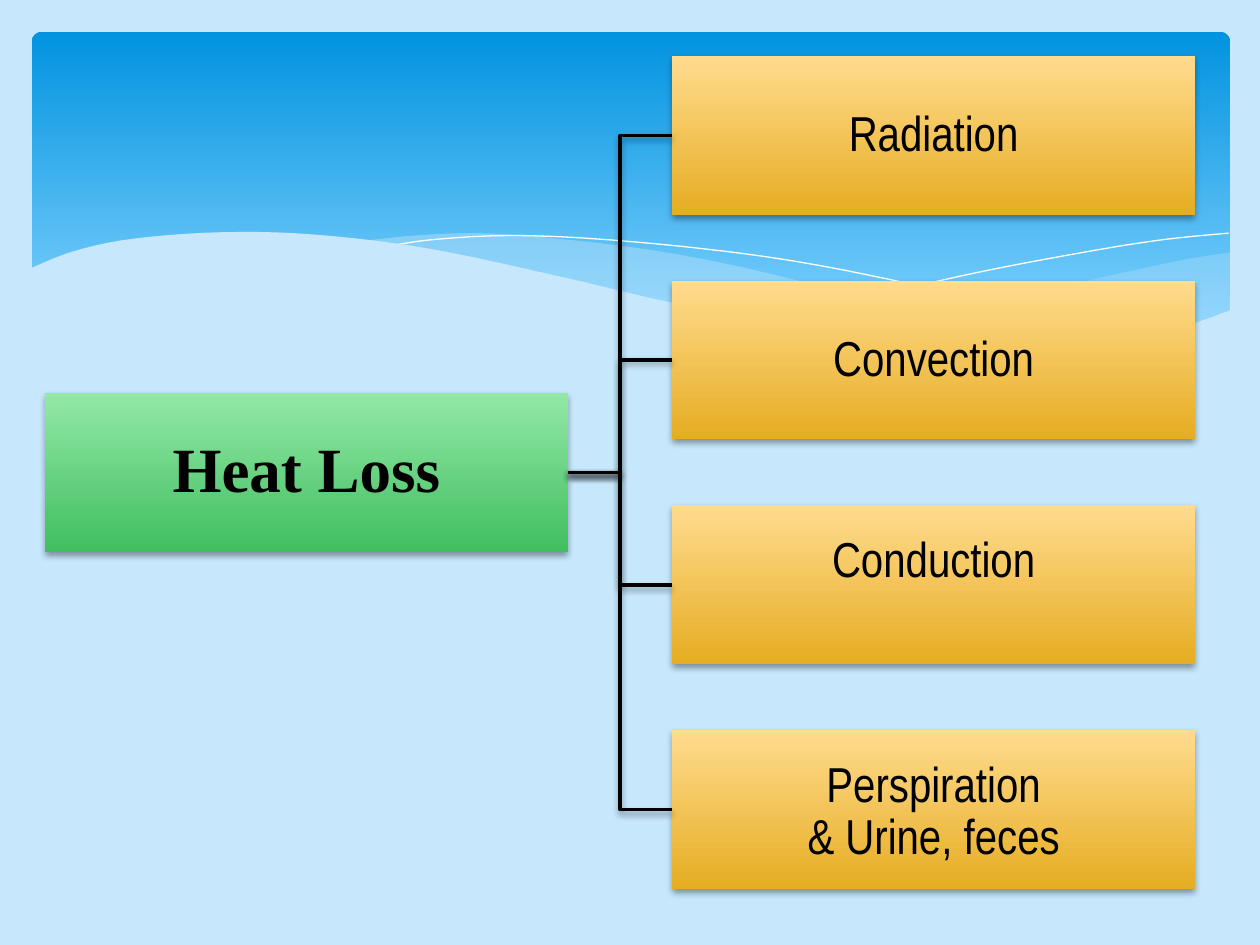
import pptx
import pptx.util
import pptx.dml.color
import pptx.enum.shapes
import pptx.enum.text
import pptx.oxml
import pptx.oxml.ns
import lxml.etree

Cm, Pt = pptx.util.Cm, pptx.util.Pt
KIND = pptx.enum.shapes.MSO_SHAPE
SKY, WHITE, BLACK = "C6E7FC", "FFFFFF", "000000"

# Knots of the waves, in cm from the corner of the banner
SWELL = [
    [(24.16, 4.45), (23.11, 4.62), (21.23, 5.03), (19.15, 5.51), (17.3, 5.89),
     (16.15, 6.1)],
    [(16.15, 6.1), (17.27, 6.25), (18.59, 6.38), (20.04, 6.43), (21.29, 6.35),
     (22.35, 6.2), (23.29, 5.94), (24.16, 5.64)]]
CREST = [
    [(6.63, 4.22), (7.7, 4.11), (9.02, 4.06), (10.59, 4.17), (12.42, 4.39),
     (14.2, 4.72), (16.33, 5.23), (18.19, 5.64), (19.86, 5.97), (22.05, 6.3)],
    [(22.05, 6.3), (20.9, 6.4), (19.58, 6.43), (18.06, 6.35), (16.26, 6.12),
     (14.2, 5.77), (10.77, 5), (9.09, 4.62), (7.57, 4.34), (6.63, 4.22)]]
FALL = [[(7.21, 4.32), (8.1, 4.19), (9.55, 4.11), (11.28, 4.17), (13.49, 4.37),
         (15.52, 4.65), (17.83, 5.11), (20.47, 5.74), (22.4, 6.27)]]
RISE = [[(14.94, 5.89), (17.02, 5.33), (19.08, 4.85), (21.36, 4.42),
         (22.83, 4.19), (24.13, 4.06)]]
FRONT = [
    [(-0.05, 4.78), (0.86, 4.42), (2.06, 4.17), (3.86, 4.04), (5.72, 4.09),
     (8, 4.37), (10.72, 4.95), (12.8, 5.44), (15.27, 5.92), (17.35, 6.22),
     (19.13, 6.38), (20.62, 6.38), (21.89, 6.25), (22.99, 6.02), (24.18, 5.61)],
    [(24.18, 7.72), (-0.05, 7.72)]]


def hue(code):
    return pptx.dml.color.RGBColor.from_string(code)


def blend(shape, top, base, end=1.0):
    """Fill a shape from top to base, without an outline."""
    shape.fill.gradient()
    shape.fill.gradient_angle = 270
    for stop, code, pos in zip(shape.fill.gradient_stops, (top, base), (0, end)):
        stop.color.rgb = hue(code)
        stop.position = pos
    shape.line.fill.background()


def shade(shape):
    """Cast a soft shadow straight down."""
    props = shape._element.spPr
    list_tag = pptx.oxml.ns.qn("a:effectLst")
    group = props.find(list_tag)
    if group is None:
        group = lxml.etree.SubElement(props, list_tag)
    group.append(pptx.oxml.parse_xml(
        f'<a:outerShdw {pptx.oxml.ns.nsdecls("a")} blurRad="{Pt(4)}" '
        f'dist="{Pt(2)}" dir="5400000" rotWithShape="0">'
        f'<a:srgbClr val="{BLACK}"><a:alpha val="38000"/></a:srgbClr>'
        '</a:outerShdw>'))


def write(shape, text, font="Arial Narrow", size=28, bold=False, pad=0.05,
          foot=None):
    """Set centred text, one paragraph a line; foot is the lower margin."""
    frame = shape.text_frame
    frame.word_wrap = True
    frame.vertical_anchor = pptx.enum.text.MSO_ANCHOR.MIDDLE
    frame.margin_left = frame.margin_right = frame.margin_top = Cm(pad)
    frame.margin_bottom = Cm(pad if foot is None else foot)
    frame.text = text
    for para in frame.paragraphs:
        para.alignment = pptx.enum.text.PP_ALIGN.CENTER
        para.font.name, para.font.size = font, Pt(size)
        para.font.bold, para.font.color.rgb = bold, hue(BLACK)
    frame.paragraphs[-1].line_spacing = 0.9


def curve(knots, steps=5):
    """Points of a smooth curve through the knots."""
    ends = [knots[0], *knots, knots[-1]]
    points = [knots[0]]
    for a, b, c, d in zip(ends, ends[1:], ends[2:], ends[3:]):
        for t in (i / steps for i in range(1, steps + 1)):
            points.append(tuple(
                q + t / 2 * (r - p + t * (2 * p - 5 * q + 4 * r - s
                                          + t * (3 * (q - r) + s - p)))
                for p, q, r, s in zip(a, b, c, d)))
    return points


def wave(slide, x, y, parts, fill=None, alpha=100):
    """Draw a filled wave, or a hairline if there is no fill."""
    points = [(Cm(x + px), Cm(y + py)) for part in parts for px, py in curve(part)]
    pen = slide.shapes.build_freeform(*points[0])
    pen.add_line_segments(points[1:], close=fill is not None)
    shape = pen.convert_to_shape()
    shape.shadow.inherit = False
    if fill is None:
        shape.fill.background()
        shape.line.color.rgb = hue(WHITE)
        shape.line.width = Pt(0)
        return
    shape.fill.solid()
    shape.fill.fore_color.rgb = hue(fill)
    shape.line.fill.background()
    if alpha < 100:
        tone = shape._element.spPr.find(".//" + pptx.oxml.ns.qn("a:srgbClr"))
        lxml.etree.SubElement(tone, pptx.oxml.ns.qn("a:alpha"),
                              val=str(alpha * 1000))


def banner(slide, x, y, wide, high):
    """Blue panel with waves along its lower edge."""
    panel = slide.shapes.add_shape(KIND.ROUNDED_RECTANGLE,
                                   Cm(x), Cm(y), Cm(wide), Cm(high))
    panel.adjustments[0] = 0.03
    panel.shadow.inherit = False
    blend(panel, "0293E0", "83D3FE", end=0.9)
    wave(slide, x, y, SWELL, SKY, alpha=29)
    wave(slide, x, y, CREST, SKY, alpha=40)
    wave(slide, x, y, FALL)
    wave(slide, x, y, RISE)
    wave(slide, x, y, FRONT, SKY)


def card(slide, x, y, wide, high, tones, text, **style):
    shape = slide.shapes.add_shape(KIND.RECTANGLE,
                                   Cm(x), Cm(y), Cm(wide), Cm(high))
    shape.shadow.inherit = False
    blend(shape, *tones)
    shade(shape)
    write(shape, text, **style)
    return shape


def link(slide, start, end):
    line = slide.shapes.add_connector(pptx.enum.shapes.MSO_CONNECTOR.ELBOW,
                                      0, 0, 0, 0)
    line.begin_connect(start, 3)
    line.end_connect(end, 1)
    line.line.color.rgb = hue(BLACK)
    line.line.width = Pt(2)
    shade(line)


def tree(slide, x, y, wide, high):
    """Root card on the left, linked to evenly spaced leaf cards."""
    leaves = [("Radiation", {}), ("Convection", {}),
              ("Conduction", {"foot": 1}),
              ("Perspiration\n& Urine, feces", {})]
    broad, tall = 10.54, 3.2
    step = (high - tall) / (len(leaves) - 1)
    root = card(slide, x, y + (high - tall) / 2, broad, tall,
                ("92E8A6", "41BF60"), "Heat Loss",
                font="Times New Roman", size=36, bold=True, pad=0.08)
    for i, (text, style) in enumerate(leaves):
        leaf = card(slide, x + wide - broad, y + i * step, broad, tall,
                    ("FFDB8E", "E6AD22"), text, **style)
        link(slide, root, leaf)


def main():
    deck = pptx.Presentation()
    deck.slide_width, deck.slide_height = Cm(25.4), Cm(19.05)
    slide = deck.slides.add_slide(deck.slide_layouts[6])
    slide.background.fill.solid()
    slide.background.fill.fore_color.rgb = hue(SKY)
    banner(slide, 0.64, 0.64, 24.16, 6.86)
    tree(slide, 0.91, 1.13, 23.18, 16.79)
    deck.save("out.pptx")


if __name__ == "__main__":
    main()
